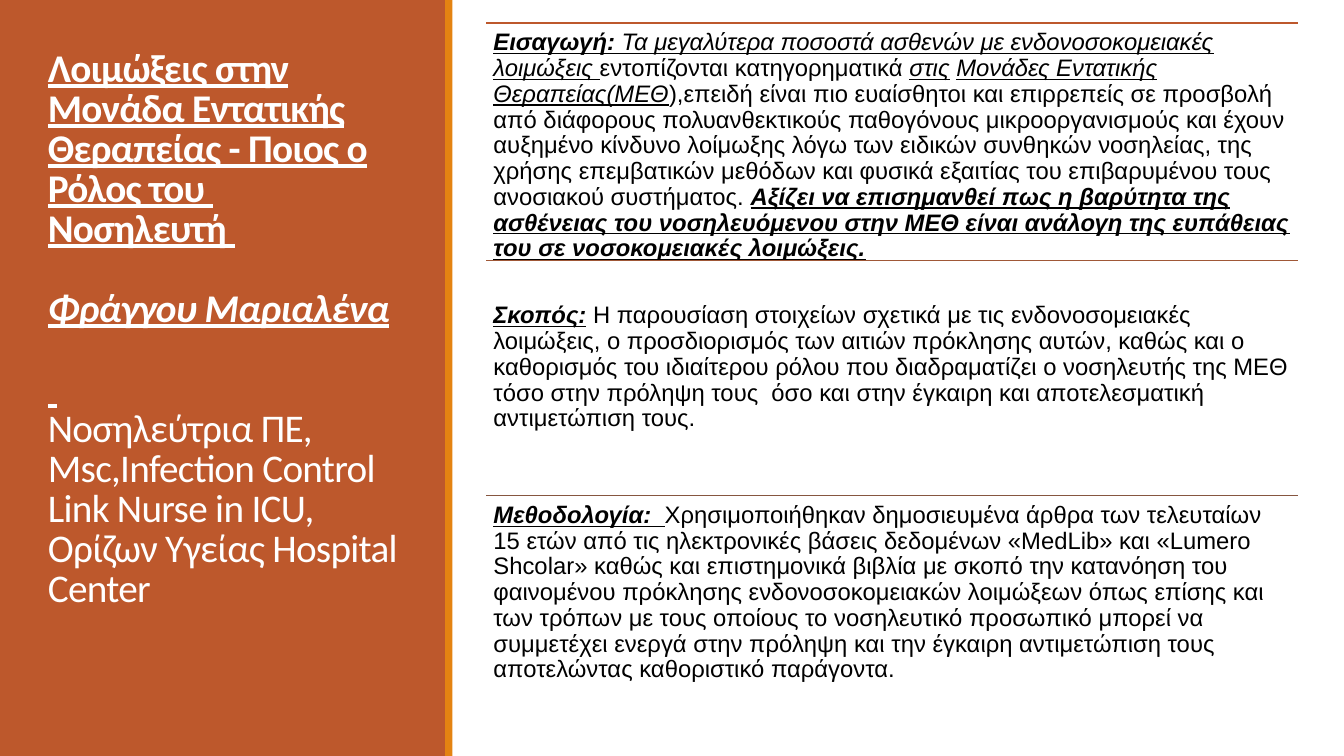
"""Build a slide about infections in the intensive care unit."""
from copy import deepcopy
from dataclasses import dataclass

from lxml.etree import SubElement
from pptx import Presentation
from pptx.dml.color import RGBColor
from pptx.enum.shapes import MSO_CONNECTOR, MSO_SHAPE
from pptx.enum.text import MSO_ANCHOR, MSO_AUTO_SIZE, PP_ALIGN
from pptx.oxml.ns import qn
from pptx.util import Emu, Pt

EMU_PER_PX = 9525
WIDTH, HEIGHT = 1280, 720
COLUMN_LEFT, COLUMN_WIDTH, SECTION_HEIGHT, INSET = 463, 773, 225, 7


@dataclass(frozen=True)
class Span:
    text: str
    style: str = ""


@dataclass(frozen=True)
class Section:
    rule_top: int
    text_top: int
    rule_color: str
    spans: tuple[Span, ...]


TITLE = (
    Span("Λοιμώξεις στην Μονάδα Εντατικής Θεραπείας - Ποιος ο Ρόλος του \n"
         "Νοσηλευτή \n\n", "bu"),
    Span("Φράγγου Μαριαλένα\n\n", "biu"),
    Span(" \n", "bu"),
    Span("Νοσηλεύτρια ΠΕ, Μsc,Infection Control Link Nurse in ICU, "
         "Ορίζων Υγείας Hospital Center\n"),
)

SECTIONS = (
    Section(22, 22, "BD582C", (
        Span("Εισαγωγή: ", "biu"),
        Span("Τα μεγαλύτερα ποσοστά ασθενών με ενδονοσοκομειακές λοιμώξεις ", "iu"),
        Span("εντοπίζονται κατηγορηματικά "),
        Span("στις", "iu"),
        Span(" "),
        Span("Μονάδες Εντατικής Θεραπείας(ΜΕΘ", "iu"),
        Span("),επειδή είναι πιο ευαίσθητοι και επιρρεπείς σε προσβολή από διάφορους "
             "πολυανθεκτικούς παθογόνους μικροοργανισμούς και έχουν αυξημένο κίνδυνο "
             "λοίμωξης λόγω των ειδικών συνθηκών νοσηλείας, της χρήσης επεμβατικών "
             "μεθόδων και φυσικά εξαιτίας του επιβαρυμένου τους ανοσιακού συστήματος. "),
        Span("Αξίζει να επισημανθεί πως η βαρύτητα της ασθένειας του νοσηλευόμενου "
             "στην ΜΕΘ είναι ανάλογη της ευπάθειας του σε νοσοκομειακές λοιμώξεις.",
             "biu"),
    )),
    Section(248, 282, "A05837", (
        Span("Σκοπός:", "biu"),
        Span(" H παρουσίαση στοιχείων σχετικά με τις ενδονοσομειακές λοιμώξεις, ο "
             "προσδιορισμός των αιτιών πρόκλησης αυτών, καθώς και ο καθορισμός του "
             "ιδιαίτερου ρόλου που διαδραματίζει ο νοσηλευτής της ΜΕΘ τόσο στην "
             "πρόληψη τους  όσο και στην έγκαιρη και αποτελεσματική αντιμετώπιση τους."),
    )),
    Section(472, 472, "865640", (
        Span("Μεθοδολογία:  ", "biu"),
        Span("Χρησιμοποιήθηκαν δημοσιευμένα άρθρα των τελευταίων 15 ετών από τις "
             "ηλεκτρονικές βάσεις δεδομένων «MedLib» και «Lumero Shcolar» καθώς και "
             "επιστημονικά βιβλία με σκοπό την κατανόηση του φαινομένου πρόκλησης "
             "ενδονοσοκομειακών λοιμώξεων όπως επίσης και των τρόπων με τους οποίους "
             "το νοσηλευτικό προσωπικό μπορεί να συμμετέχει ενεργά στην πρόληψη και "
             "την έγκαιρη αντιμετώπιση τους αποτελώντας καθοριστικό παράγοντα."),
    )),
)


def px(length: int) -> Emu:
    """Turn pixels into EMU."""
    return Emu(length * EMU_PER_PX)


def color(value: str) -> RGBColor:
    """Turn a hex string into a colour."""
    return RGBColor.from_string(value)


def add_text(paragraph, text: str, *, font: str, size: int, fill: str,
             style: str = "", spacing: int = 0) -> None:
    """Add formatted text, with a line break at each newline."""
    for index, line in enumerate(text.split("\n")):
        if index:
            paragraph.add_line_break()
            line_break = paragraph._p.findall(qn("a:br"))[-1]
            line_break.append(deepcopy(properties))
        run = paragraph.add_run()
        run.text = line
        run.font.name, run.font.size = font, Pt(size)
        run.font.color.rgb = color(fill)
        run.font.bold = "b" in style
        run.font.italic = "i" in style
        run.font.underline = "u" in style
        properties = run._r.rPr
        if spacing:
            properties.set("spc", str(spacing))
        if not line:
            paragraph._p.remove(run._r)


def add_bar(slide, left: int, width: int, fill: str) -> None:
    """Add a full-height plain bar."""
    bar = slide.shapes.add_shape(MSO_SHAPE.RECTANGLE, px(left), 0, px(width), px(HEIGHT))
    bar.shadow.inherit = False
    bar.fill.solid()
    bar.fill.fore_color.rgb = color(fill)
    bar.line.fill.background()


def place_title(slide) -> None:
    """Format the title placeholder and bring it to the front."""
    title = slide.shapes.title
    title.left, title.top, title.width, title.height = map(px, (36, -23, 360, HEIGHT))
    frame = title.text_frame
    frame.word_wrap, frame.auto_size = True, MSO_AUTO_SIZE.NONE
    frame.vertical_anchor = MSO_ANCHOR.MIDDLE
    paragraph = frame.paragraphs[0]
    paragraph.alignment = PP_ALIGN.LEFT
    paragraph.line_spacing, paragraph.space_after = 0.85, Pt(8)
    for span in TITLE:
        add_text(paragraph, span.text, font="Calibri", size=28, fill="FFFFFF",
                 style=span.style, spacing=-50)
    SubElement(paragraph._p, qn("a:endParaRPr"), sz="2800")
    title.element.getparent().append(title.element)


def add_section(slide, section: Section) -> None:
    """Add a rule and the text that belongs to it."""
    rule = slide.shapes.add_connector(
        MSO_CONNECTOR.STRAIGHT, px(COLUMN_LEFT), px(section.rule_top),
        px(COLUMN_LEFT + COLUMN_WIDTH), px(section.rule_top))
    rule.line.color.rgb = color(section.rule_color)
    rule.line.width = Pt(1.25)
    SubElement(rule.element.spPr, qn("a:effectLst"))
    box = slide.shapes.add_textbox(px(COLUMN_LEFT), px(section.text_top),
                                   px(COLUMN_WIDTH), px(SECTION_HEIGHT))
    frame = box.text_frame
    frame.word_wrap = True
    frame.margin_left = frame.margin_right = px(INSET)
    frame.margin_top = frame.margin_bottom = px(INSET)
    paragraph = frame.paragraphs[0]
    paragraph.line_spacing = 0.9
    for span in section.spans:
        add_text(paragraph, span.text, font="Arial", size=17, fill="000000",
                 style=span.style)


def main() -> None:
    """Build and save the presentation."""
    presentation = Presentation()
    presentation.slide_width, presentation.slide_height = px(WIDTH), px(HEIGHT)
    slide = presentation.slides.add_slide(presentation.slide_layouts[5])
    add_bar(slide, 0, 425, "BD582C")
    place_title(slide)
    add_bar(slide, 424, 7, "E48312")
    for section in SECTIONS:
        add_section(slide, section)
    presentation.save("out.pptx")


if __name__ == "__main__":
    main()
